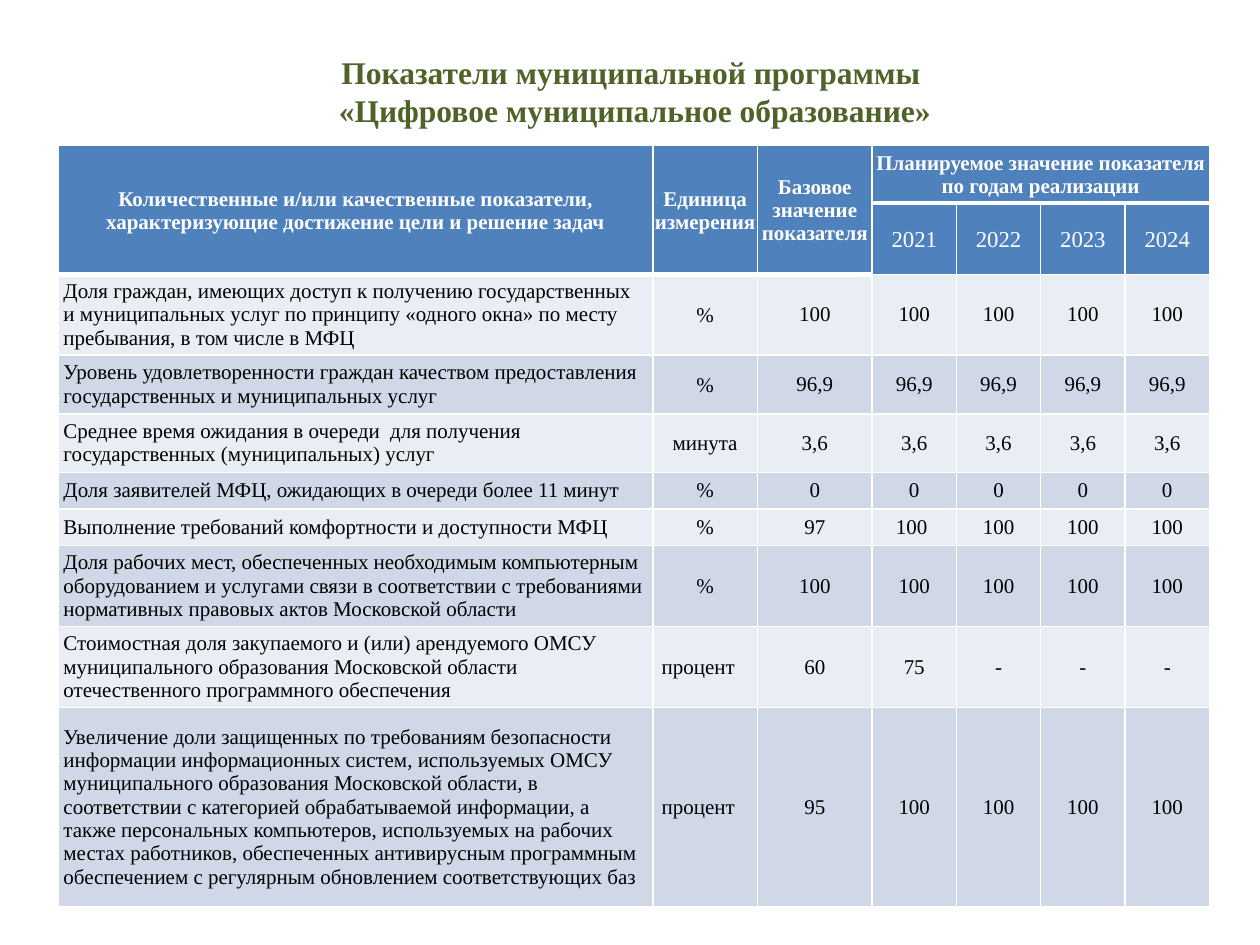
from lxml import etree
from pptx import Presentation
from pptx.dml.color import RGBColor
from pptx.enum.text import MSO_ANCHOR, PP_ALIGN
from pptx.oxml.ns import qn
from pptx.util import Cm, Pt

LEFT, CENTER = PP_ALIGN.LEFT, PP_ALIGN.CENTER
MIDDLE = MSO_ANCHOR.MIDDLE
FONT = "Times New Roman"
WHITE = RGBColor(0xFF, 0xFF, 0xFF)
BLACK = RGBColor(0, 0, 0)
GREEN = RGBColor(0x4F, 0x62, 0x28)
BLUE = RGBColor(0x4F, 0x81, 0xBD)
BANDS = (RGBColor(0xE9, 0xED, 0xF4), RGBColor(0xD0, 0xD8, 0xE8))

TITLE = "Показатели муниципальной программы \v«Цифровое муниципальное образование»"
HEADS = [
    "Количественные и/или качественные показатели, характеризующие достижение цели и решение задач",
    "Единица измерения",
    "Базовое значение показателя",
    "Планируемое значение показателя по годам реализации",
]
YEARS = ["2021", "2022", "2023", "2024"]
GOALS = [
    ("Доля граждан, имеющих доступ к получению государственных и муниципальных услуг "
     "по принципу «одного окна» по месту пребывания, в том числе в МФЦ",
     "%", "100", "100", "100", "100", "100"),
    ("Уровень удовлетворенности граждан качеством предоставления государственных "
     "и муниципальных услуг",
     "%", "96,9", "96,9", "96,9", "96,9", "96,9"),
    ("Среднее время ожидания в очереди  для получения государственных (муниципальных) услуг",
     "минута", "3,6", "3,6", "3,6", "3,6", "3,6"),
    ("Доля заявителей МФЦ, ожидающих в очереди более 11 минут",
     "%", "0", "0", "0", "0", "0"),
    ("Выполнение требований комфортности и доступности МФЦ",
     "%", "97", "100 ", "100", "100", "100"),
    ("Доля рабочих мест, обеспеченных необходимым компьютерным оборудованием и услугами "
     "связи в соответствии с требованиями нормативных правовых актов Московской области",
     "%", "100", "100", "100", "100", "100"),
    ("Стоимостная доля закупаемого и (или) арендуемого ОМСУ муниципального образования "
     "Московской области отечественного программного обеспечения",
     "процент", "60", "75", "-", "-", "-"),
    ("Увеличение доли защищенных по требованиям безопасности информации информационных "
     "систем, используемых ОМСУ муниципального образования Московской области, "
     "в соответствии с категорией обрабатываемой информации, а также персональных "
     "компьютеров, используемых на рабочих местах работников, обеспеченных антивирусным "
     "программным обеспечением с регулярным обновлением соответствующих баз",
     "процент", "95", "100", "100", "100", "100"),
]
WIDTHS = [11.98, 2.11, 2.31] + [1.7] * len(YEARS)
HEIGHTS = [1.16, 1.42, 1.63, 1.18, 1.18, 0.74, 0.74, 1.63, 1.63, 4.02]
FIRST = len(HEADS) - 1


def write(frame, text, size=12, color=BLACK, bold=False, align=CENTER):
    frame.text = text
    para = frame.paragraphs[0]
    para.alignment = align
    for run in para.runs:
        font = run.font
        font.name, font.size, font.bold = FONT, Pt(size), bold
        font.color.rgb = color


def pad(cell, side, top, base):
    cell.margin_left = cell.margin_right = Cm(side)
    cell.margin_top, cell.margin_bottom = Cm(top), Cm(base)


def edge(cell, side, width):
    line = etree.SubElement(cell._tc.get_or_add_tcPr(), qn(f"a:ln{side}"), w=str(Pt(width)))
    fill = etree.SubElement(line, qn("a:solidFill"))
    etree.SubElement(fill, qn("a:srgbClr"), val=str(WHITE))


def paint(cell, row, col):
    last = 0 if col >= FIRST else 1
    top = 3 if row == last + 1 else 1
    base = 3 if row == last else 1
    for side, width in (("L", 1), ("R", 1), ("T", top), ("B", base)):
        edge(cell, side, width)
    cell.fill.solid()
    cell.fill.fore_color.rgb = BLUE if row < 2 else BANDS[row % 2]
    cell.vertical_anchor = MIDDLE


def head(grid):
    for col, text in enumerate(HEADS):
        cell = grid.cell(0, col)
        cell.merge(grid.cell(0, len(WIDTHS) - 1) if col == FIRST else grid.cell(1, col))
        write(cell.text_frame, text, color=WHITE, bold=True)
        pad(cell, 0.03, 0.03, 0)
    for col, year in enumerate(YEARS, FIRST):
        cell = grid.cell(1, col)
        write(cell.text_frame, year, size=13, color=WHITE)
        pad(cell, 0.03, 0.03, 0)


def body(grid):
    for row, goal in enumerate(GOALS, 2):
        for col, text in enumerate(goal):
            cell = grid.cell(row, col)
            align = LEFT if col == 0 or text == "процент" else CENTER
            write(cell.text_frame, text, align=align)
            if col == 0:
                gap = 0.1 if row == len(HEIGHTS) - 1 else 0
                pad(cell, 0.1, gap, gap)
            elif col == 1 and row < 4:
                pad(cell, 0.03, 0.03, 0)
            else:
                pad(cell, 0.18, 0, 0)


def main():
    deck = Presentation()
    deck.slide_width, deck.slide_height = Cm(25.4), Cm(19.05)
    slide = deck.slides.add_slide(deck.slide_layouts[5])
    title = slide.shapes.title
    title.left, title.top, title.width, title.height = Cm(1.3), Cm(0.53), Cm(23), Cm(2.6)
    title.text_frame.vertical_anchor = MIDDLE
    write(title.text_frame, TITLE, size=18, color=GREEN, bold=True)

    grid = slide.shapes.add_table(
        len(HEIGHTS), len(WIDTHS), Cm(1.18), Cm(2.93), Cm(sum(WIDTHS)), Cm(sum(HEIGHTS))
    ).table
    for col, width in enumerate(WIDTHS):
        grid.columns[col].width = Cm(width)
    for row, height in enumerate(HEIGHTS):
        grid.rows[row].height = Cm(height)
        for col in range(len(WIDTHS)):
            paint(grid.cell(row, col), row, col)
    head(grid)
    body(grid)
    deck.save("out.pptx")


if __name__ == "__main__":
    main()
